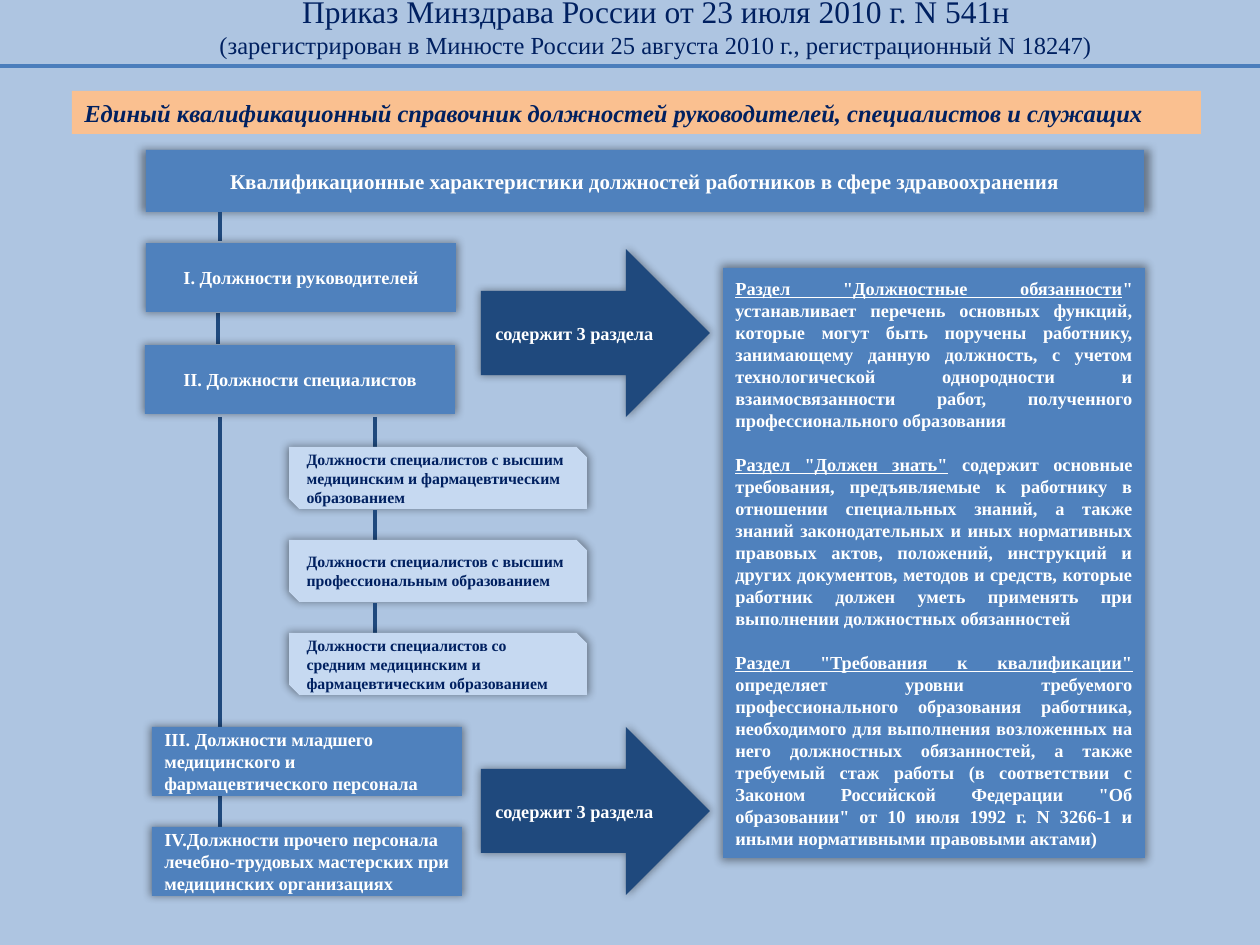
from dataclasses import dataclass

from lxml import etree
from pptx import Presentation
from pptx.dml.color import RGBColor
from pptx.enum.shapes import MSO_CONNECTOR as Connector, MSO_SHAPE as Shape
from pptx.enum.text import MSO_ANCHOR as Anchor, MSO_AUTO_SIZE as AutoSize, PP_ALIGN as Align
from pptx.oxml import parse_xml
from pptx.oxml.ns import nsdecls, qn
from pptx.util import Pt


@dataclass(frozen=True)
class Theme:
    font: str = "Times New Roman"
    background: str = "AEC5E1"
    banner: str = "FAC090"
    block: str = "4F81BD"
    detail: str = "C6D9F1"
    dark: str = "1F497D"
    rule: str = "4B7EBC"
    ink: str = "002060"
    light: str = "FFFFFF"
    title_size: float = 18
    banner_size: float = 14
    header_size: float = 12
    body_size: float = 10.5
    detail_size: float = 9
    line_width: float = 2
    rule_width: float = 1.75


THEME = Theme()


def px(value):
    return round(value * 914400 / 126)


def color(code):
    return RGBColor.from_string(code)


def add_run(paragraph, text, size, code, **formats):
    run = paragraph.add_run()
    run.text = text
    run.font.color.rgb = color(code)
    for name, value in {"name": THEME.font, "size": Pt(size), **formats}.items():
        setattr(run.font, name, value)


def add_line(slide, start, end, code=THEME.dark, width=THEME.line_width):
    line = slide.shapes.add_connector(Connector.STRAIGHT, *map(px, start + end))
    line.line.color.rgb = color(code)
    line.line.width = Pt(width)
    etree.SubElement(line._element.spPr, qn("a:effectLst"))


def add_glow(shape):
    """Soft dark shadow spreading evenly around the shape."""
    effects = shape._element.spPr.find(qn("a:effectLst"))
    effects.append(parse_xml(
        f'<a:outerShdw {nsdecls("a")} blurRad="63500" sx="101000" sy="101000" '
        'algn="ctr" rotWithShape="0"><a:srgbClr val="000000">'
        '<a:alpha val="40000"/></a:srgbClr></a:outerShdw>'))


def add_block(slide, box, fill, paragraphs, size, code, kind=Shape.RECTANGLE,
              align=Align.LEFT, glow=True, gap=0, **formats):
    """A filled shape; each paragraph is a list of (text, underlined) parts."""
    shape = slide.shapes.add_shape(kind, *map(px, box))
    shape.shadow.inherit = False
    shape.fill.solid()
    shape.fill.fore_color.rgb = color(fill)
    shape.line.fill.background()
    if glow:
        add_glow(shape)
    frame = shape.text_frame
    frame.word_wrap = True
    frame.vertical_anchor = Anchor.MIDDLE
    for index, parts in enumerate(paragraphs):
        paragraph = frame.add_paragraph() if index else frame.paragraphs[0]
        paragraph.alignment = align
        if index:
            paragraph.space_before = Pt(gap)
        for text, underlined in parts:
            add_run(paragraph, text, size, code, bold=True,
                    underline=underlined, **formats)


def add_title(slide, box):
    title = slide.shapes.title
    title.left, title.top, title.width, title.height = map(px, box)
    frame = title.text_frame
    settings = {"word_wrap": False, "auto_size": AutoSize.NONE,
                "vertical_anchor": Anchor.TOP}
    for name, value in settings.items():
        setattr(frame, name, value)
    lines = (
        ("Приказ Минздрава России от 23 июля 2010 г. N 541н", THEME.title_size),
        ("(зарегистрирован в Минюсте России 25 августа 2010 г., "
         "регистрационный N 18247)", THEME.banner_size),
    )
    for index, (text, size) in enumerate(lines):
        paragraph = frame.add_paragraph() if index else frame.paragraphs[0]
        paragraph.alignment = Align.CENTER
        paragraph.space_before = Pt(0)
        add_run(paragraph, text, size, THEME.ink)
    add_line(slide, (0, 66), (1260, 66), THEME.rule, THEME.rule_width)


def add_headings(slide, box):
    left, top, width, height = box
    add_block(slide, (left, top, width, 43), THEME.banner,
              [[("Единый квалификационный справочник должностей руководителей, "
                 "специалистов и служащих", False)]],
              THEME.banner_size, THEME.ink, glow=False, italic=True)
    add_block(slide, (left + 74, top + height - 62, 998, 62), THEME.block,
              [[("Квалификационные характеристики должностей работников "
                 "в сфере здравоохранения", False)]],
              THEME.header_size, THEME.light, align=Align.CENTER)


def add_positions(slide, box):
    left, top, width, height = box
    # Trunk between the main groups: x, start and end
    for x, start, end in ((75, 0, 29), (73, 101, 132), (75, 205, 515), (75, 583, 615)):
        add_line(slide, (left + x, top + start), (left + x, top + end))
    # Main groups
    groups = (
        (1, 31, "I. Должности руководителей", Align.CENTER),
        (0, 133, "II. Должности специалистов", Align.CENTER),
        (7, 515, "III. Должности младшего медицинского и фармацевтического "
                 "персонала", Align.LEFT),
        (7, 615, "IV.Должности прочего персонала лечебно-трудовых мастерских "
                 "при медицинских организациях", Align.LEFT),
    )
    for x, y, text, align in groups:
        add_block(slide, (left + x, top + y, 310, 69), THEME.block,
                  [[(text, False)]], THEME.body_size, THEME.light, align=align)
    # Kinds of specialists, hung at an equal pitch
    details = (
        "Должности специалистов с высшим медицинским и фармацевтическим образованием",
        "Должности специалистов с высшим профессиональным образованием",
        "Должности специалистов со средним медицинским и фармацевтическим образованием",
    )
    for index, text in enumerate(details):
        y = top + 235 + 93 * index
        add_line(slide, (left + 230, y - 30), (left + 230, y))
        add_block(slide, (left + width - 298, y, 298, 62), THEME.detail,
                  [[(text, False)]], THEME.detail_size, THEME.ink,
                  kind=Shape.SNIP_2_DIAG_RECTANGLE)


def add_arrow(slide, box):
    add_block(slide, box, THEME.dark, [[("содержит 3 раздела", False)]],
              THEME.body_size, THEME.light, kind=Shape.RIGHT_ARROW, align=Align.CENTER)


def add_sections(slide, box):
    sections = (
        ('Раздел "Должностные обязанности',
         '" устанавливает перечень основных функций, которые могут быть поручены '
         'работнику, занимающему данную должность, с учетом технологической '
         'однородности и взаимосвязанности работ, полученного профессионального '
         'образования'),
        ('Раздел "Должен знать"',
         ' содержит основные требования, предъявляемые к работнику в отношении '
         'специальных знаний, а также знаний законодательных и иных нормативных '
         'правовых актов, положений, инструкций и других документов, методов и '
         'средств, которые работник должен уметь применять при выполнении '
         'должностных обязанностей'),
        ('Раздел "Требования к квалификации"',
         ' определяет уровни требуемого профессионального образования работника, '
         'необходимого для выполнения возложенных на него должностных обязанностей, '
         'а также требуемый стаж работы (в соответствии с Законом Российской '
         'Федерации "Об образовании" от 10 июля 1992 г. N 3266-1 и иными '
         'нормативными правовыми актами)'),
    )
    add_block(slide, box, THEME.block,
              [[(name, True), (text, False)] for name, text in sections],
              THEME.body_size, THEME.light, align=Align.JUSTIFY, gap=12.5)


def main():
    presentation = Presentation()
    presentation.slide_width, presentation.slide_height = px(1260), px(945)
    slide = presentation.slides.add_slide(presentation.slide_layouts[5])
    slide.background.fill.solid()
    slide.background.fill.fore_color.rgb = color(THEME.background)
    add_title(slide, (203, -14, 906, 118))
    add_headings(slide, (72, 91, 1129, 121))
    add_positions(slide, (145, 212, 442, 684))
    add_sections(slide, (723, 268, 422, 590))
    for top in (249, 727):
        add_arrow(slide, (481, top, 229, 168))
    presentation.save("out.pptx")


if __name__ == "__main__":
    main()
